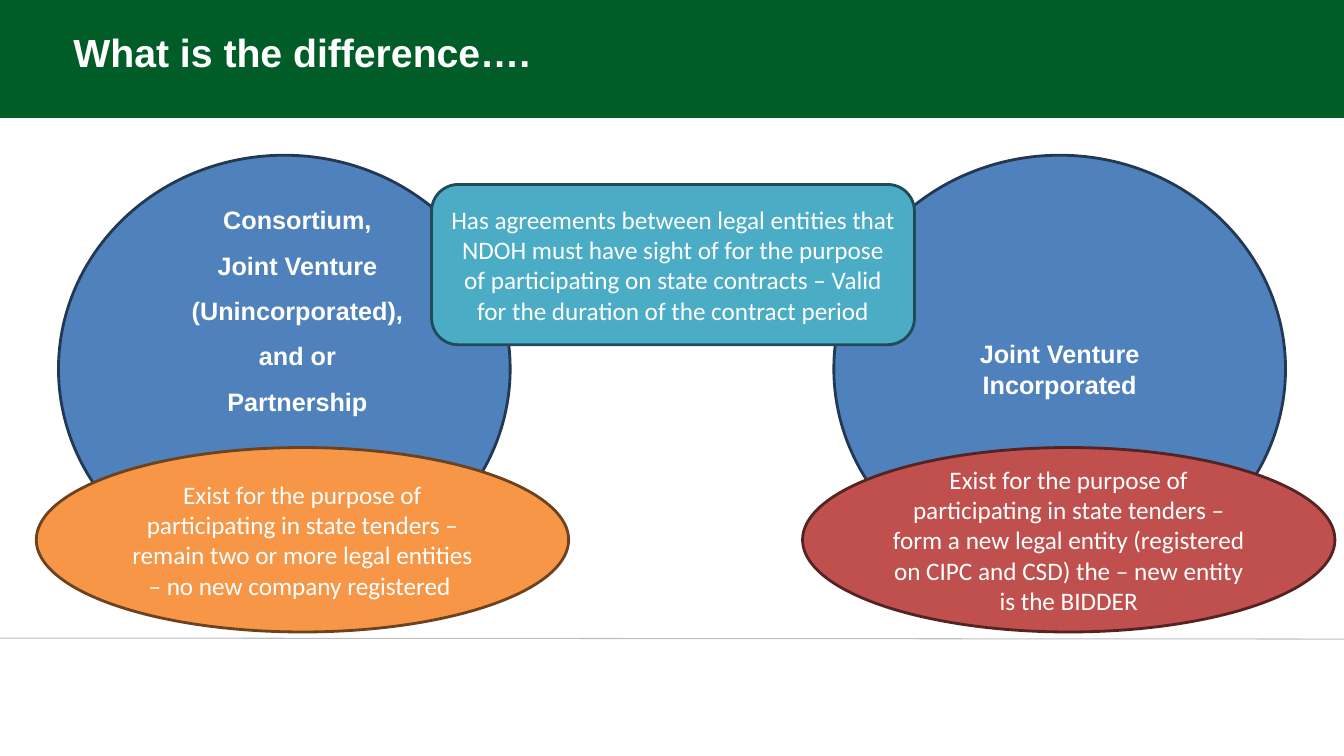
from pptx import Presentation, util as u
from pptx.dml.color import RGBColor
from pptx.enum import shapes, text
from pptx.oxml import parse_xml
from pptx.oxml.ns import nsdecls

HUES = {
    "white": "FFFFFF", "green": "005D28", "gray": "BFBFBF",
    "blue": "4F81BD", "navy": "233953", "orange": "F79646", "brown": "6C421F",
    "red": "C0504D", "maroon": "542322", "teal": "4BACC6", "pine": "214B57",
}
WIDE, HIGH = 13.33, 7.5
TITLE = "What is the difference…."
GROUP = "Consortium, Joint Venture (Unincorporated), and or Partnership"
FIRM = "Joint Venture Incorporated"
REMAIN = ("Exist for the purpose of participating in state tenders – remain two "
          "or more legal entities – no new company registered ")
FORM = ("Exist for the purpose of participating in state tenders – form a new "
        "legal entity (registered on CIPC and CSD) the – new entity is the BIDDER")
SHARED = ("Has agreements between legal entities that NDOH must have sight of for "
          "the purpose of participating on state contracts – Valid for the "
          "duration of the contract period")

DISC = (1.54, 4.48, 4.24)  # top, width, height
NOTE = (4.44, 5.28, 1.83)
LINK = (1.83, 4.79, 1.59)
KIND = shapes.MSO_SHAPE

# kind, left, (top, width, height), fill, line, words, font, bold
DISCS = [
    (KIND.OVAL, 0.58, DISC, "blue", "navy", "", "Arial", True),
    (KIND.OVAL, 8.27, DISC, "blue", "navy", FIRM, "Arial", True),
]
NOTES = [
    (KIND.OVAL, 0.36, NOTE, "orange", "brown", REMAIN, "Calibri", False),
    (KIND.OVAL, 7.96, NOTE, "red", "maroon", FORM, "Calibri", False),
    (KIND.ROUNDED_RECTANGLE, 4.28, LINK, "teal", "pine", SHARED, "Calibri", False),
]


def hue(name):
    return RGBColor.from_string(HUES[name])


def write(frame, words, size, font, bold, align, indent=0):
    frame.word_wrap = True
    para = frame.paragraphs[0]
    para.alignment = align
    if indent:
        props = para._p.get_or_add_pPr()
        props.set("marL", str(u.Inches(indent)))
        props.set("indent", "0")
    run = para.add_run()
    run.text = words
    run.font.size = u.Pt(size)
    run.font.name = font
    run.font.bold = bold
    run.font.color.rgb = hue("white")
    return para


def add_form(slide, kind, left, box, fill, line=None):
    form = slide.shapes.add_shape(kind, *map(u.Inches, (left, *box)))
    form.shadow.inherit = False
    form.fill.solid()
    form.fill.fore_color.rgb = hue(fill)
    if line:
        form.line.color.rgb = hue(line)
        form.line.width = u.Pt(2)
    else:
        form.line.fill.background()
    return form


def add_bubble(slide, kind, left, box, fill, line, words, font, bold):
    form = add_form(slide, kind, left, box, fill, line)
    if words:
        form.text_frame.vertical_anchor = text.MSO_ANCHOR.MIDDLE
        write(form.text_frame, words, 18, font, bold, text.PP_ALIGN.CENTER)


def add_label(slide, place, words, size, align, indent):
    box = slide.shapes.add_textbox(*map(u.Inches, place))
    return write(box.text_frame, words, size, "Arial", True, align, indent)


def add_rule(slide):
    rule = slide.shapes.add_connector(
        shapes.MSO_CONNECTOR.STRAIGHT, *map(u.Inches, (0, 6.33, WIDE, 6.34)))
    rule.line.color.rgb = hue("gray")
    rule.line.width = u.Pt(0.75)
    rule._element.spPr.append(parse_xml(f"<a:effectLst {nsdecls('a')}/>"))


def main():
    deck = Presentation()
    deck.slide_width, deck.slide_height = u.Inches(WIDE), u.Inches(HIGH)
    slide = deck.slides.add_slide(deck.slide_layouts[6])
    add_form(slide, KIND.RECTANGLE, 0, (0, WIDE, 1.17), "green")
    add_rule(slide)
    add_label(slide, (0.13, 0.23, 8.31, 0.57), TITLE, 28, text.PP_ALIGN.LEFT, 0.5)
    for disc in DISCS:
        add_bubble(slide, *disc)
    group = add_label(slide, (1.54, 1.83, 2.57, 2.32), GROUP, 18,
                      text.PP_ALIGN.CENTER, 0.25)
    group.line_spacing = 1.5
    for note in NOTES:
        add_bubble(slide, *note)
    deck.save("out.pptx")


if __name__ == "__main__":
    main()
